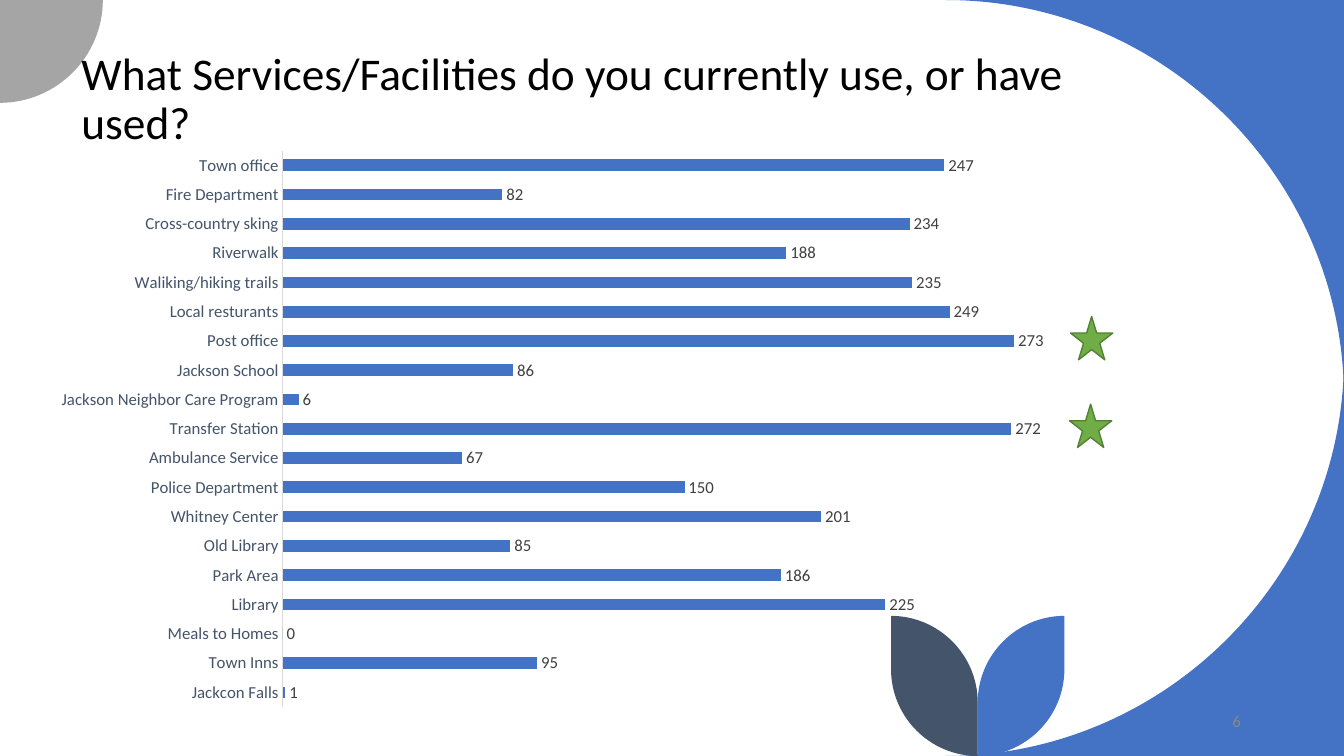
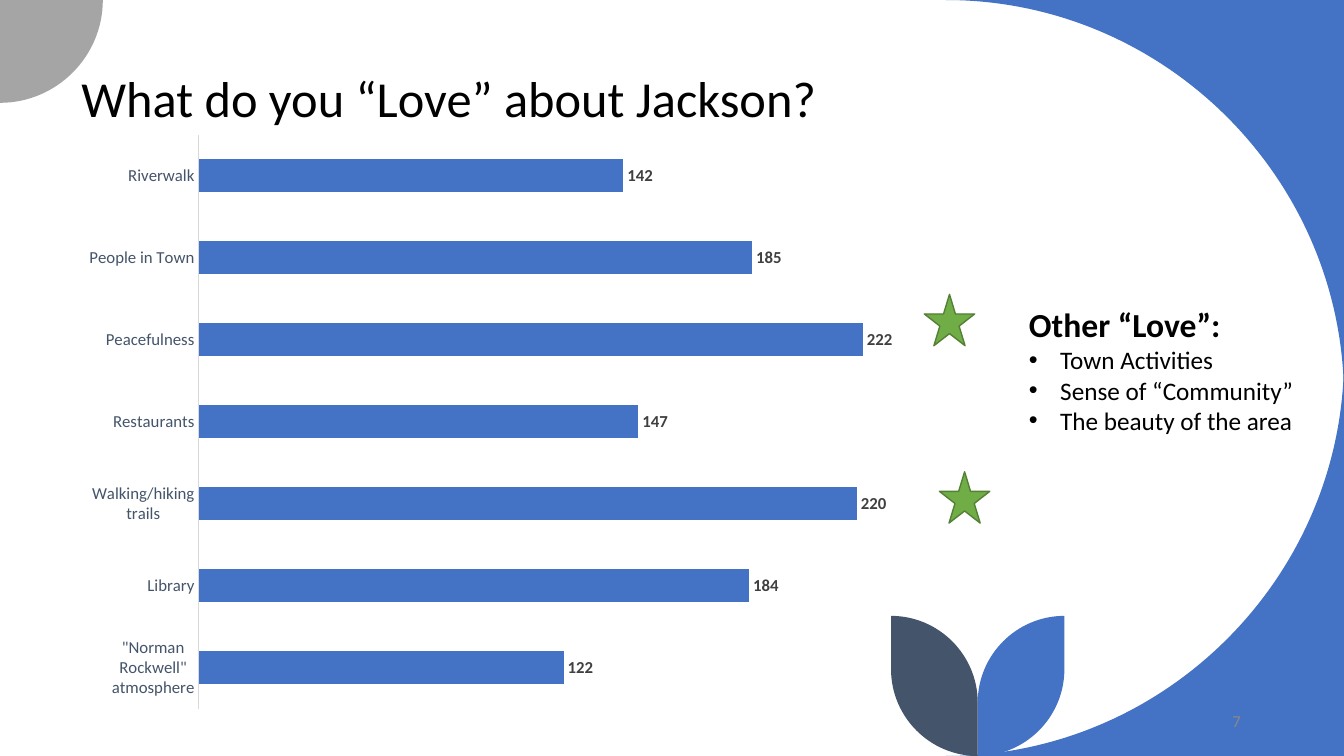
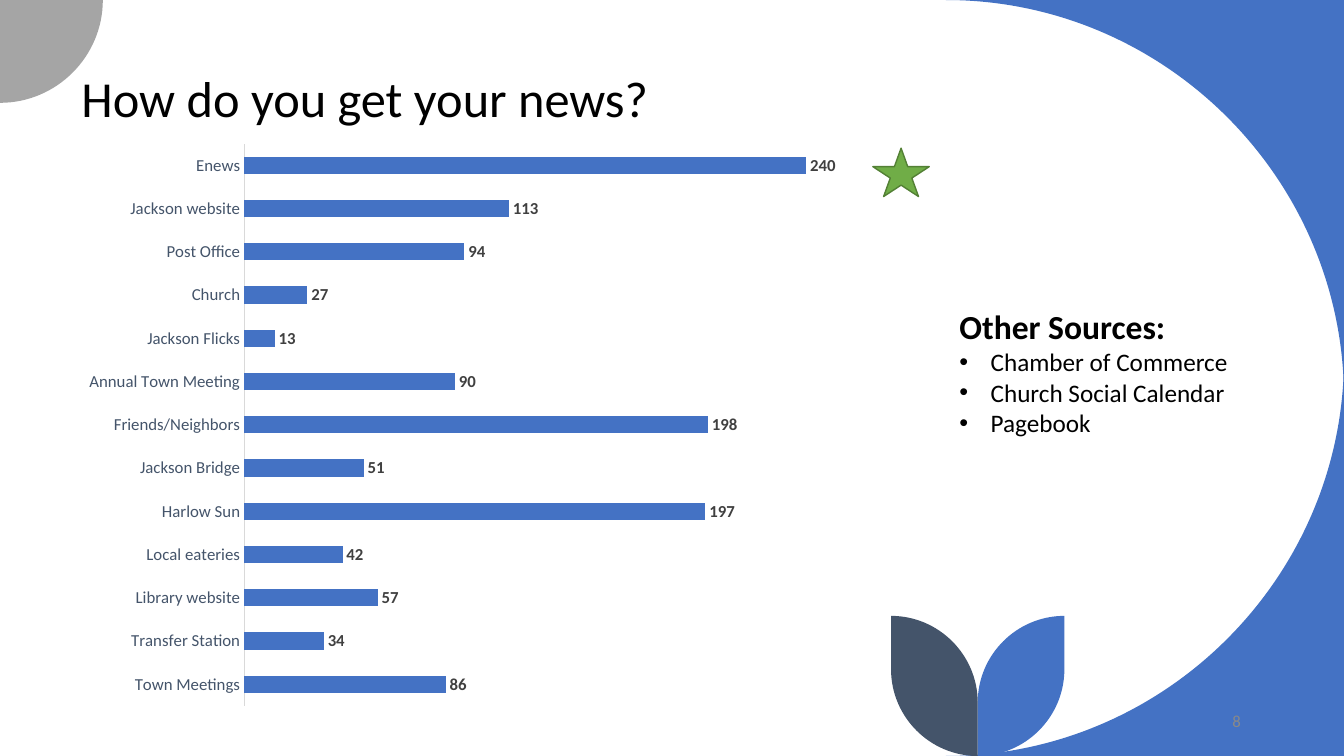
from lxml.etree import SubElement
from pptx import Presentation
from pptx.chart.data import CategoryChartData
from pptx.dml.color import RGBColor
from pptx.enum.chart import XL_CHART_TYPE, XL_LABEL_POSITION, XL_TICK_LABEL_POSITION, XL_TICK_MARK
from pptx.enum.shapes import MSO_SHAPE
from pptx.enum.text import MSO_ANCHOR, MSO_AUTO_SIZE, PP_ALIGN
from pptx.oxml.ns import qn
from pptx.util import Inches, Pt

WIDTH, HEIGHT = 40 / 3, 7.5
COLORS = {
    "blue": "4472C4", "slate": "44546A", "gray": "A5A5A5", "black": "000000",
    "label": "404040", "axis": "D9D9D9", "star": "70AD47", "star_edge": "538035",
    "number": "898989",
}
FORMATS = {
    "title": {"size": Pt(36), "color": "black"},
    "heading": {"size": Pt(24), "bold": True, "color": "black"},
    "bullet": {"size": Pt(18), "bold": False, "color": "black"},
    "number": {"size": Pt(12), "color": "number"},
    "chart": {"size": Pt(10), "color": "black"},
    "category": {"size": Pt(12), "color": "slate"},
    "value": {"size": Pt(12), "color": "label"},
}

SERVICES = {
    "Town office": 247, "Fire Department": 82, "Cross-country sking": 234,
    "Riverwalk": 188, "Waliking/hiking trails": 235, "Local resturants": 249,
    "Post office": 273, "Jackson School": 86, "Jackson Neighbor Care Program": 6,
    "Transfer Station": 272, "Ambulance Service": 67, "Police Department": 150,
    "Whitney Center": 201, "Old Library": 85, "Park Area": 186, "Library": 225,
    "Meals to Homes": 0, "Town Inns": 95, "Jackcon Falls": 1,
}
LOVES = {
    "Riverwalk": 142, "People in Town": 185, "Peacefulness": 222,
    "Restaurants": 147, "Walking/hiking trails": 220, "Library": 184,
    '"Norman Rockwell" atmosphere': 122,
}
NEWS = {
    "Enews": 240, "Jackson website": 113, "Post Office": 94, "Church": 27,
    "Jackson Flicks": 13, "Annual Town Meeting": 90, "Friends/Neighbors": 198,
    "Jackson Bridge": 51, "Harlow Sun": 197, "Local eateries": 42,
    "Library website": 57, "Transfer Station": 34, "Town Meetings": 86,
}


def rgb(name):
    return RGBColor.from_string(COLORS[name])


def format_font(font, kind, **changes):
    font.name = "Calibri"
    for attribute, value in {**FORMATS[kind], **changes}.items():
        if attribute == "color":
            font.color.rgb = rgb(value)
        else:
            setattr(font, attribute, value)


def quarter(start, corner, end):
    """Bezier step for a quarter circle that bulges towards a corner."""
    pull = 0.55
    controls = [tuple(p + (c - p) * pull for p, c in zip(point, corner))
                for point in (start, end)]
    return [*controls, end]


def add_outline(slide, start, steps, color):
    """A step holds one point for a straight side or three for a Bezier curve."""
    points = [(Inches(x), Inches(y)) for step in steps for x, y in step]
    builder = slide.shapes.build_freeform(Inches(start[0]), Inches(start[1]))
    builder.add_line_segments(points, close=True)
    outline = builder.convert_to_shape()
    sides = iter(list(outline.element.iter(qn("a:lnTo"))))
    for step in steps:
        first, *others = [next(sides) for _ in step]
        if others:
            curve = first.makeelement(qn("a:cubicBezTo"))
            first.addprevious(curve)
            for side in (first, *others):
                curve.append(side[0])
                side.getparent().remove(side)
    outline.shadow.inherit = False
    outline.fill.solid()
    outline.fill.fore_color.rgb = rgb(color)
    outline.line.fill.background()
    return outline


def add_leaf(slide, side, color):
    """Side is 1 for the leaf right of the stem and -1 for the left one."""
    stem, top, width = 9.7, 6.11, 0.86
    tip = stem + side * width
    shoulder, waist = (tip, HEIGHT - width), (stem, top + width)
    steps = [
        [shoulder],
        quarter(shoulder, (tip, HEIGHT), (stem, HEIGHT)),
        [waist],
        quarter(waist, (stem, top), (tip, top)),
    ]
    return add_outline(slide, (tip, top), steps, color)


def add_backdrop(slide, layout):
    """Draw the shared shapes on a slide and hand them to its layout."""
    sweep, disc = 3.95, 1.02
    left = WIDTH - sweep
    upper, lower = (WIDTH, sweep), (WIDTH, HEIGHT - sweep)
    top_right, bottom_right = (WIDTH, 0), (WIDTH, HEIGHT)
    backdrop = [
        add_outline(slide, top_right,
                    [[(left, 0)], quarter((left, 0), top_right, upper)], "blue"),
        add_outline(slide, lower,
                    [quarter(lower, bottom_right, (left, HEIGHT)), [bottom_right]], "blue"),
        add_outline(slide, (0, 0),
                    [[(disc, 0)], quarter((disc, 0), (disc, disc), (0, disc))], "gray"),
        add_leaf(slide, 1, "blue"),
        add_leaf(slide, -1, "slate"),
    ]
    for part in backdrop:
        layout.shapes.element.append(part.element)


def add_text(slide, box, lines, anchor=MSO_ANCHOR.TOP, auto_size=MSO_AUTO_SIZE.NONE):
    """Each line is a pair of text and format name; returns the paragraphs."""
    frame = slide.shapes.add_textbox(*map(Inches, box)).text_frame
    settings = {"word_wrap": True, "vertical_anchor": anchor, "auto_size": auto_size}
    for attribute, value in settings.items():
        setattr(frame, attribute, value)
    for index, (text, kind) in enumerate(lines):
        paragraph = frame.add_paragraph() if index else frame.paragraphs[0]
        run = paragraph.add_run()
        run.text = text
        format_font(run.font, kind)
    return frame.paragraphs


def add_title(slide, text, size):
    title = add_text(slide, (0.71, 0.5, 10.77, 1), [(text, "title")], MSO_ANCHOR.MIDDLE)[0]
    title.line_spacing = 0.9
    title.runs[0].font.size = Pt(size)


def add_page_number(slide, number):
    box = (11.41, 6.95, 1, 0.4)
    page = add_text(slide, box, [(str(number), "number")], MSO_ANCHOR.MIDDLE)[0]
    page.alignment = PP_ALIGN.RIGHT


def add_answers(slide, box, heading, answers):
    lines = [(heading, "heading")] + [(answer, "bullet") for answer in answers]
    paragraphs = add_text(slide, box, lines, auto_size=MSO_AUTO_SIZE.SHAPE_TO_FIT_TEXT)
    for paragraph in paragraphs[1:]:
        properties = paragraph._p.get_or_add_pPr()
        properties.set("marL", str(Inches(0.31)))
        properties.set("indent", str(-Inches(0.31)))
        SubElement(properties, qn("a:buFont")).set("typeface", "Arial")
        SubElement(properties, qn("a:buChar")).set("char", "•")


def add_votes_chart(slide, box, votes, axis_max, bold):
    data = CategoryChartData()
    data.categories = list(votes)
    data.add_series("Series 1", list(votes.values()))
    frame = slide.shapes.add_chart(XL_CHART_TYPE.BAR_CLUSTERED, *map(Inches, box), data)
    chart = frame.chart
    chart.has_title = chart.has_legend = False
    format_font(chart.font, "chart")

    axis_settings = {
        chart.category_axis: {
            "reverse_order": True, "has_major_gridlines": False,
            "major_tick_mark": XL_TICK_MARK.NONE, "minor_tick_mark": XL_TICK_MARK.NONE,
            "tick_label_position": XL_TICK_LABEL_POSITION.NEXT_TO_AXIS,
        },
        chart.value_axis: {
            "visible": False, "has_major_gridlines": False,
            "minimum_scale": 0, "maximum_scale": axis_max,
        },
    }
    for axis, settings in axis_settings.items():
        for attribute, value in settings.items():
            setattr(axis, attribute, value)
    format_font(chart.category_axis.tick_labels.font, "category")
    axis_line = chart.category_axis.format.line
    axis_line.color.rgb = rgb("axis")
    axis_line.width = Pt(0.75)

    plot = chart.plots[0]
    plot.gap_width, plot.overlap = 150, -25
    plot.vary_by_categories = False
    bars = plot.series[0].format.fill
    bars.solid()
    bars.fore_color.rgb = rgb("blue")
    plot.has_data_labels = True
    labels = plot.data_labels
    labels.show_value = True
    labels.position = XL_LABEL_POSITION.OUTSIDE_END
    format_font(labels.font, "value", bold=bold)


def add_star(slide, box):
    star = slide.shapes.add_shape(MSO_SHAPE.STAR_5_POINT, *map(Inches, box))
    star.shadow.inherit = False
    star.fill.solid()
    star.fill.fore_color.rgb = rgb("star")
    star.line.color.rgb = rgb("star_edge")
    star.line.width = Pt(1)


def add_question(deck, number, title, votes, chart_box, axis_max, stars,
                 title_size=36, bold=True):
    """Add one survey slide: question, bar chart and stars on the top answers."""
    layout = deck.slide_layouts[6]
    slide = deck.slides.add_slide(layout)
    if len(deck.slides) == 1:
        add_backdrop(slide, layout)
    add_title(slide, title, title_size)
    add_votes_chart(slide, chart_box, votes, axis_max, bold)
    for star_box in stars:
        add_star(slide, star_box)
    add_page_number(slide, number)
    return slide


def main():
    deck = Presentation()
    deck.slide_width, deck.slide_height = Inches(WIDTH), Inches(HEIGHT)

    add_question(deck, 6, "What Services/Facilities do you currently use, or have used?",
                 SERVICES, (0.4, 1.38, 10.59, 5.75), 300,
                 [(10.61, 4.01, 0.42, 0.43), (10.62, 3.14, 0.42, 0.43)],
                 title_size=32.4, bold=False)

    loves = add_question(deck, 7, "What do you “Love” about Jackson?",
                         LOVES, (0.71, 1.22, 8.86, 5.93), 250,
                         [(9.17, 2.92, 0.5, 0.51), (9.32, 4.68, 0.5, 0.51)])
    add_answers(loves, (10.11, 2.97, 3.02, 1.72), "Other “Love”:",
                ["Town Activities", "Sense of “Community”", "The beauty of the area"])

    news = add_question(deck, 8, "How do you get your news?",
                        NEWS, (0.71, 1.31, 8.86, 5.81), 300,
                        [(8.66, 1.47, 0.56, 0.48)])
    add_answers(news, (9.42, 2.99, 3, 1.72), "Other Sources:",
                ["Chamber of Commerce", "Church Social Calendar", "Pagebook"])

    deck.save("out.pptx")


if __name__ == "__main__":
    main()
